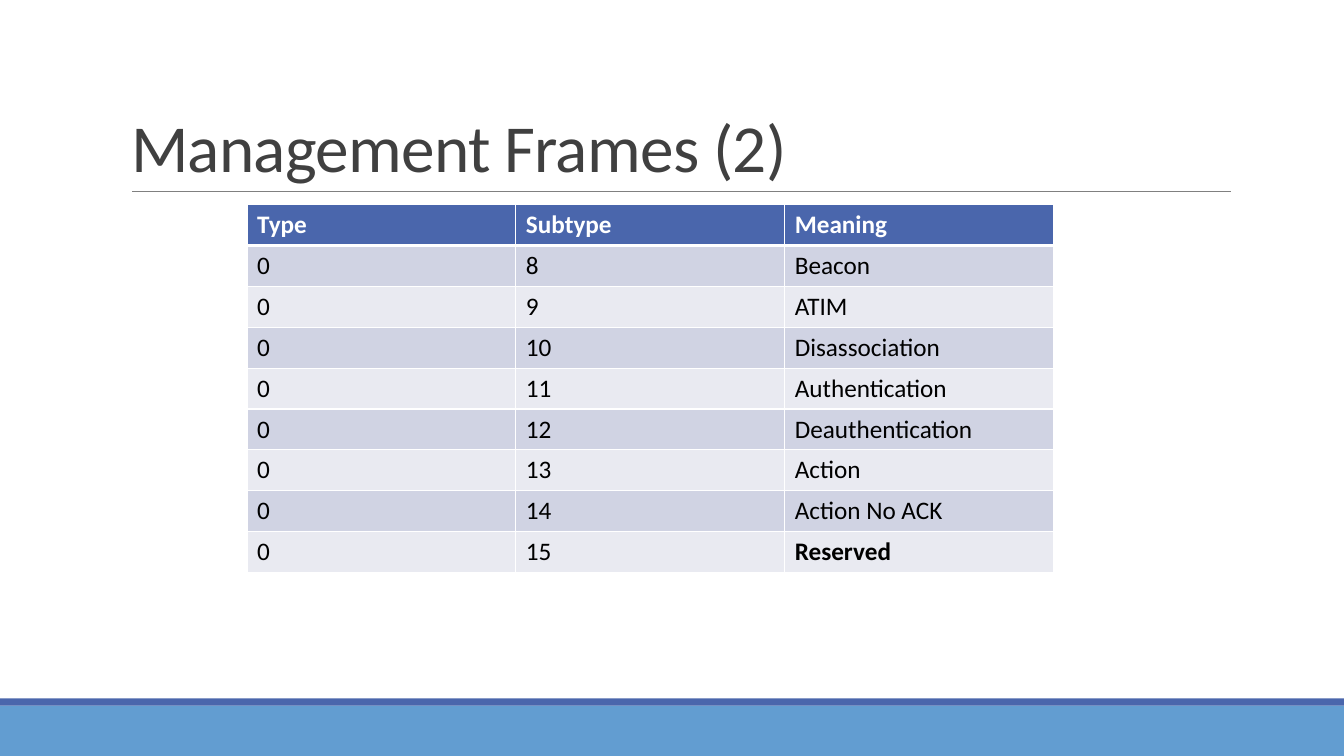
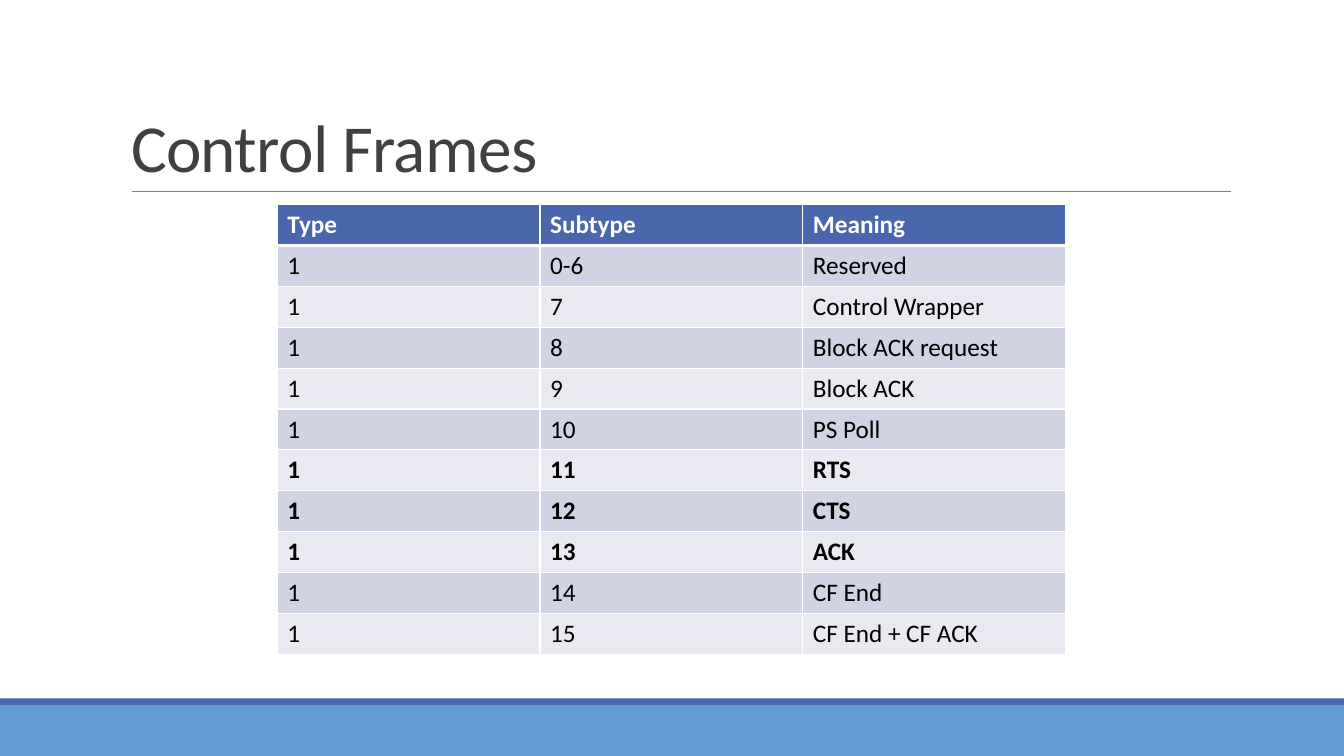
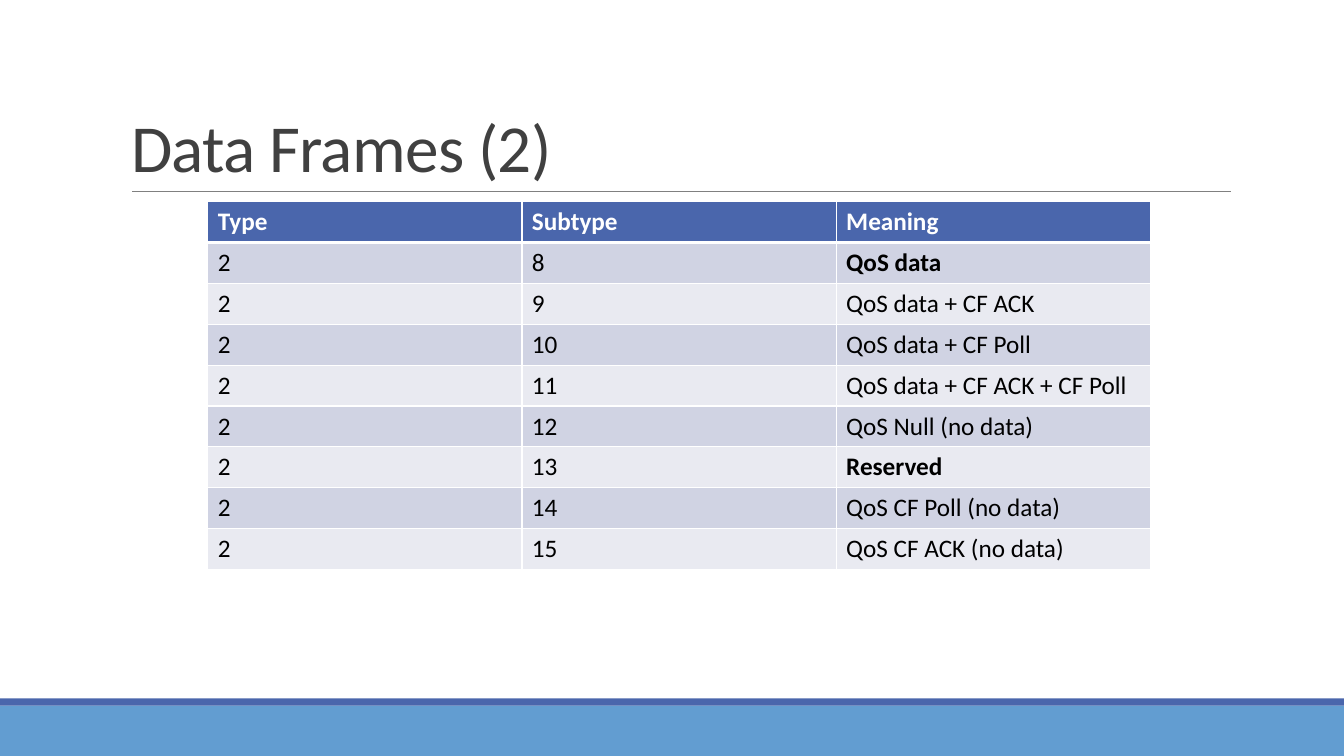
"""Build three slides that list the subtypes of wireless frames."""
from lxml import etree
from pptx import Presentation
from pptx.dml.color import RGBColor
from pptx.enum.shapes import MSO_CONNECTOR, MSO_SHAPE
from pptx.enum.text import MSO_ANCHOR, MSO_AUTO_SIZE, PP_ALIGN
from pptx.oxml.ns import qn
from pptx.util import Inches, Pt

RECTANGLE = MSO_SHAPE.RECTANGLE
STRAIGHT = MSO_CONNECTOR.STRAIGHT
BOTTOM = MSO_ANCHOR.BOTTOM
FIXED_SIZE = MSO_AUTO_SIZE.NONE
LEFT = PP_ALIGN.LEFT

COLORS = {
    "footer": "629DD1",
    "accent": "4A66AC",
    "rule": "808080",
    "title": "404040",
    "white": "FFFFFF",
    "black": "000000",
    "odd_row": "D0D3E3",
    "even_row": "E9EAF1",
}
FONT = "Calibri"
SLIDE_WIDTH, SLIDE_HEIGHT = Inches(13.33), Inches(7.5)
FOOTER_HEIGHT, STRIPE_HEIGHT = Inches(0.5), Inches(0.07)
TITLE_LEFT, TITLE_TOP = Inches(1.2), Inches(0.31)
TITLE_WIDTH, TITLE_HEIGHT = Inches(11), Inches(1.59)
RULE_LEFT, RULE_RIGHT = Inches(1.31), Inches(12.21)
RULE_TOP = TITLE_TOP + TITLE_HEIGHT
ROW_HEIGHT = Pt(29.2)
TITLE_ONLY = 5
HEADINGS = ("Type", "Subtype", "Meaning")

FRAME_TABLES = [
    {
        "title": "Management Frames (2)",
        "left": 2.45, "top": 2.03, "width": 8,
        "frame_type": "0",
        "subtypes": [
            ("8", "Beacon"),
            ("9", "ATIM"),
            ("10", "Disassociation"),
            ("11", "Authentication"),
            ("12", "Deauthentication"),
            ("13", "Action"),
            ("14", "Action No ACK"),
            ("15", "Reserved"),
        ],
        "bold_meanings": {"Reserved"},
    },
    {
        "title": "Control Frames",
        "left": 2.75, "top": 2.03, "width": 7.82,
        "frame_type": "1",
        "subtypes": [
            ("0-6", "Reserved"),
            ("7", "Control Wrapper"),
            ("8", "Block ACK request"),
            ("9", "Block ACK"),
            ("10", "PS Poll"),
            ("11", "RTS"),
            ("12", "CTS"),
            ("13", "ACK"),
            ("14", "CF End"),
            ("15", "CF End + CF ACK"),
        ],
        "bold_rows": {"11", "12", "13"},
    },
    {
        "title": "Data Frames (2)",
        "left": 2.06, "top": 2, "width": 9.35,
        "frame_type": "2",
        "subtypes": [
            ("8", "QoS data"),
            ("9", "QoS data + CF ACK"),
            ("10", "QoS data + CF Poll"),
            ("11", "QoS data + CF ACK + CF Poll"),
            ("12", "QoS Null (no data)"),
            ("13", "Reserved"),
            ("14", "QoS CF Poll (no data)"),
            ("15", "QoS CF ACK (no data)"),
        ],
        "bold_meanings": {"QoS data", "Reserved"},
    },
]


def rgb(color):
    return RGBColor.from_string(COLORS[color])


def write(frame, text, size=18, color="black", bold=False, line_spacing=None, tracking=None):
    paragraph = frame.paragraphs[0]
    paragraph.alignment = LEFT
    if line_spacing:
        paragraph.line_spacing = line_spacing
    run = paragraph.add_run()
    run.text = text
    run.font.name = FONT
    run.font.size = Pt(size)
    run.font.bold = bold
    run.font.color.rgb = rgb(color)
    if tracking:
        run._r.get_or_add_rPr().set("spc", str(round(tracking * 100)))


def add_band(slide, top, height, color):
    band = slide.shapes.add_shape(RECTANGLE, 0, top, SLIDE_WIDTH, height)
    band.shadow.inherit = False
    band.fill.solid()
    band.fill.fore_color.rgb = rgb(color)
    band.line.fill.background()


def add_title_rule(slide):
    rule = slide.shapes.add_connector(STRAIGHT, RULE_LEFT, RULE_TOP, RULE_RIGHT, RULE_TOP)
    rule.line.color.rgb = rgb("rule")
    rule.line.width = Pt(0.5)
    etree.SubElement(rule._element.spPr, qn("a:effectLst"))


def add_title(slide, text):
    title = slide.shapes.title
    title.left, title.top = TITLE_LEFT, TITLE_TOP
    title.width, title.height = TITLE_WIDTH, TITLE_HEIGHT
    title.text_frame.word_wrap = True
    title.text_frame.auto_size = FIXED_SIZE
    title.text_frame.vertical_anchor = BOTTOM
    write(title.text_frame, text, size=48, color="title", line_spacing=0.85, tracking=-0.5)


def set_borders(cell, top=1, bottom=1):
    properties = cell._tc.get_or_add_tcPr()
    for side, points in (("L", 1), ("R", 1), ("T", top), ("B", bottom)):
        border = etree.SubElement(properties, qn(f"a:ln{side}"), w=str(Pt(points)))
        fill = etree.SubElement(border, qn("a:solidFill"))
        etree.SubElement(fill, qn("a:srgbClr"), val=COLORS["white"])


def fill_cell(cell, text, fill, top=1, bottom=1, **text_format):
    set_borders(cell, top, bottom)
    cell.fill.solid()
    cell.fill.fore_color.rgb = rgb(fill)
    write(cell.text_frame, text, **text_format)


def add_frame_table(slide, left, top, width, frame_type, subtypes,
                    bold_meanings=(), bold_rows=()):
    row_count = len(subtypes) + 1
    table = slide.shapes.add_table(
        row_count, len(HEADINGS), Inches(left), Inches(top),
        Inches(width), ROW_HEIGHT * row_count,
    ).table
    for row in table.rows:
        row.height = ROW_HEIGHT
    for column, heading in enumerate(HEADINGS):
        fill_cell(table.cell(0, column), heading, "accent", bottom=3, color="white", bold=True)
    for number, (subtype, meaning) in enumerate(subtypes, start=1):
        stripe = "odd_row" if number % 2 else "even_row"
        for column, text in enumerate((frame_type, subtype, meaning)):
            fill_cell(
                table.cell(number, column), text, stripe,
                top=3 if number == 1 else 1,
                bold=subtype in bold_rows or text in bold_meanings,
            )


def add_frame_slide(deck, title, **frame_table):
    slide = deck.slides.add_slide(deck.slide_layouts[TITLE_ONLY])
    footer_top = SLIDE_HEIGHT - FOOTER_HEIGHT
    add_band(slide, footer_top, FOOTER_HEIGHT, "footer")
    add_band(slide, footer_top - STRIPE_HEIGHT, STRIPE_HEIGHT, "accent")
    add_title_rule(slide)
    add_title(slide, title)
    add_frame_table(slide, **frame_table)


def main():
    deck = Presentation()
    deck.slide_width, deck.slide_height = SLIDE_WIDTH, SLIDE_HEIGHT
    for frame_table in FRAME_TABLES:
        add_frame_slide(deck, **frame_table)
    deck.save("out.pptx")


if __name__ == "__main__":
    main()
